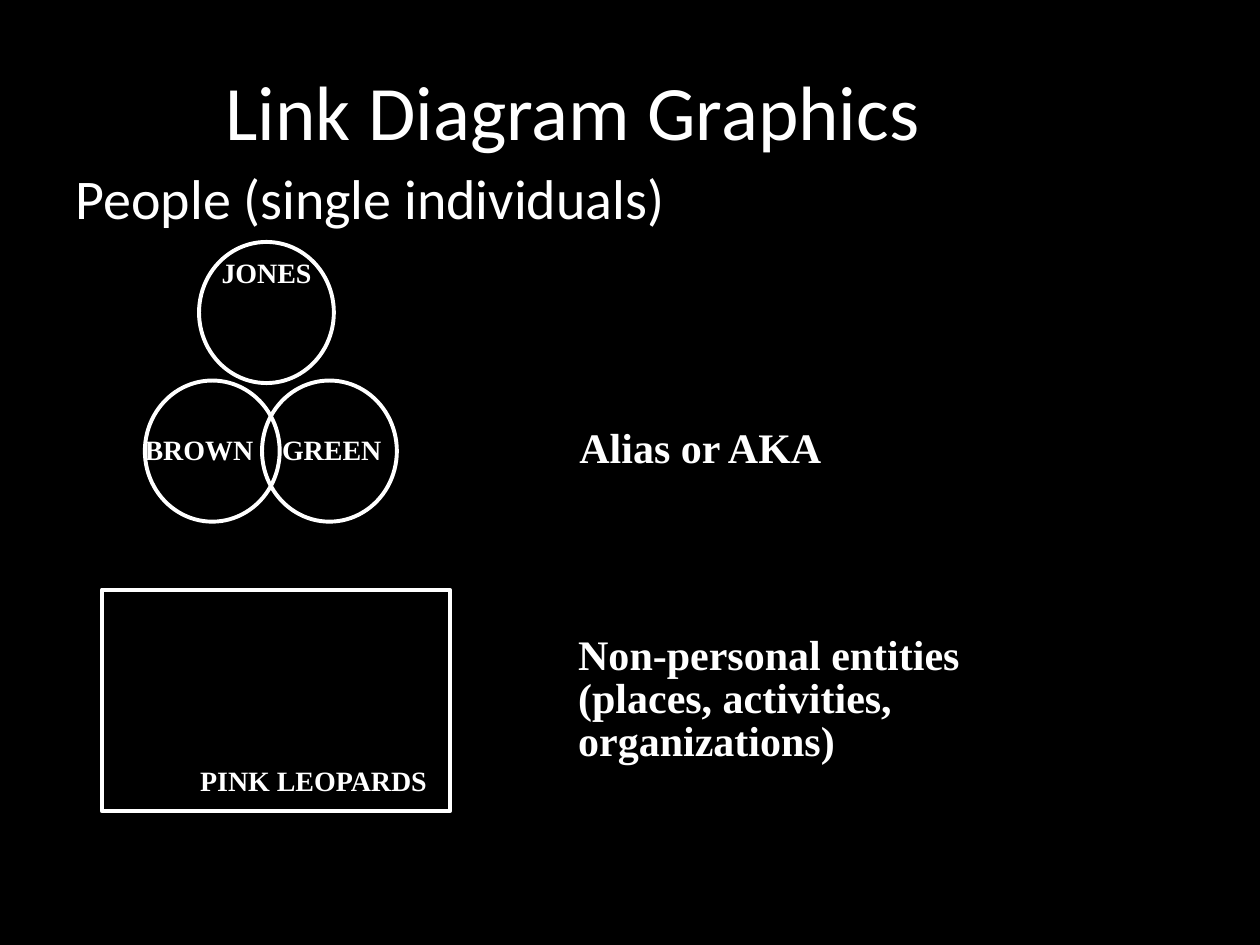
from dataclasses import dataclass

import pptx
import pptx.dml.color
import pptx.enum.shapes
import pptx.enum.text
import pptx.oxml
import pptx.util
from pptx.util import Inches

WHITE = pptx.dml.color.RGBColor(0xFF, 0xFF, 0xFF)
BLACK = pptx.dml.color.RGBColor(0x00, 0x00, 0x00)
SHAPE = pptx.enum.shapes.MSO_SHAPE
ANCHOR = pptx.enum.text.MSO_ANCHOR
SERIF = "Times New Roman"


@dataclass
class Box:
    left: float
    top: float
    width: float
    height: float

    def lengths(self) -> tuple:
        return tuple(Inches(v) for v in (self.left, self.top, self.width, self.height))


@dataclass
class Label:
    text: str
    box: Box
    size: int = 16
    wrap: bool = False
    margin_right: float = 0.1


def write(sp, text: str, font: dict, frame: dict) -> None:
    tf = sp.text_frame
    tf.auto_size = pptx.enum.text.MSO_AUTO_SIZE.NONE
    for name, value in frame.items():
        setattr(tf, name, value)
    tf.text = text
    p = tf.paragraphs[0]
    p.alignment = pptx.enum.text.PP_ALIGN.LEFT
    p.line_spacing = 0.85
    p.space_before = pptx.util.Pt(0)
    r = p.runs
    for run in r:
        for name, value in font.items():
            setattr(run.font, name, value)
        run.font.color.rgb = WHITE


def fill_placeholder(sp, text: str, box: Box, size: int, frame: dict) -> None:
    sp.left, sp.top, sp.width, sp.height = box.lengths()
    write(sp, text, {"size": pptx.util.Pt(size), "name": "Calibri"}, frame)


def draw_outline(s, kind, box: Box) -> None:
    sp = s.shapes.add_shape(kind, *box.lengths())
    sp.shadow.inherit = False
    sp.fill.background()
    sp.line.color.rgb = WHITE
    sp.line.width = pptx.util.Pt(2.25)


def draw_label(s, label: Label) -> None:
    sp = s.shapes.add_textbox(*label.box.lengths())
    font = {"size": pptx.util.Pt(label.size), "name": SERIF, "bold": True}
    frame = {
        "word_wrap": label.wrap,
        "vertical_anchor": ANCHOR.MIDDLE,
        "margin_right": Inches(label.margin_right),
    }
    write(sp, label.text, font, frame)


OUTLINES = [(SHAPE.RECTANGLE, Box(0.81, 4.68, 2.76, 1.76))] + [
    (SHAPE.OVAL, Box(left, top, 1.07, 1.12))
    for left, top in ((1.15, 3.02), (2.08, 3.02), (1.58, 1.92))
]

LABELS = [
    Label("Alias or AKA", Box(4.5, 3.36, 2.15, 0.44), 24),
    Label("Non-personal entities\v(places, activities, organizations)",
          Box(4.49, 5.17, 4.81, 0.78), 24, True, 0.5),
    Label("BROWN", Box(1.05, 3.42, 1.06, 0.33)),
    Label("GREEN", Box(2.14, 3.42, 0.99, 0.33)),
    Label("JONES", Box(1.66, 2.02, 0.92, 0.33)),
    Label("PINK LEOPARDS", Box(1.49, 6.05, 2.02, 0.33)),
]


def main() -> None:
    prs = pptx.Presentation()
    prs.slide_width, prs.slide_height = Inches(10), Inches(7.5)
    s = prs.slides.add_slide(prs.slide_layouts[1])
    s.background.fill.solid()
    s.background.fill.fore_color.rgb = BLACK

    fill_placeholder(s.shapes.title, "Link Diagram Graphics", Box(0.5, 0.3, 9, 1.25), 44,
                     {"vertical_anchor": ANCHOR.MIDDLE, "margin_left": Inches(1.29)})
    body = s.placeholders[1]
    fill_placeholder(body, "People (single individuals)", Box(0.5, 1.33, 9, 5.37), 32,
                     {"vertical_anchor": ANCHOR.TOP})
    pPr = body.text_frame.paragraphs[0]._p.get_or_add_pPr()
    pPr.set("marL", str(Inches(0.38)))
    pPr.set("indent", str(Inches(-0.38)))
    pPr.append(pptx.oxml.parse_xml(
        '<a:buNone xmlns:a="http://schemas.openxmlformats.org/drawingml/2006/main"/>'))

    for kind, box in OUTLINES:
        draw_outline(s, kind, box)
    for label in LABELS:
        draw_label(s, label)
    prs.save("out.pptx")


if __name__ == "__main__":
    main()
